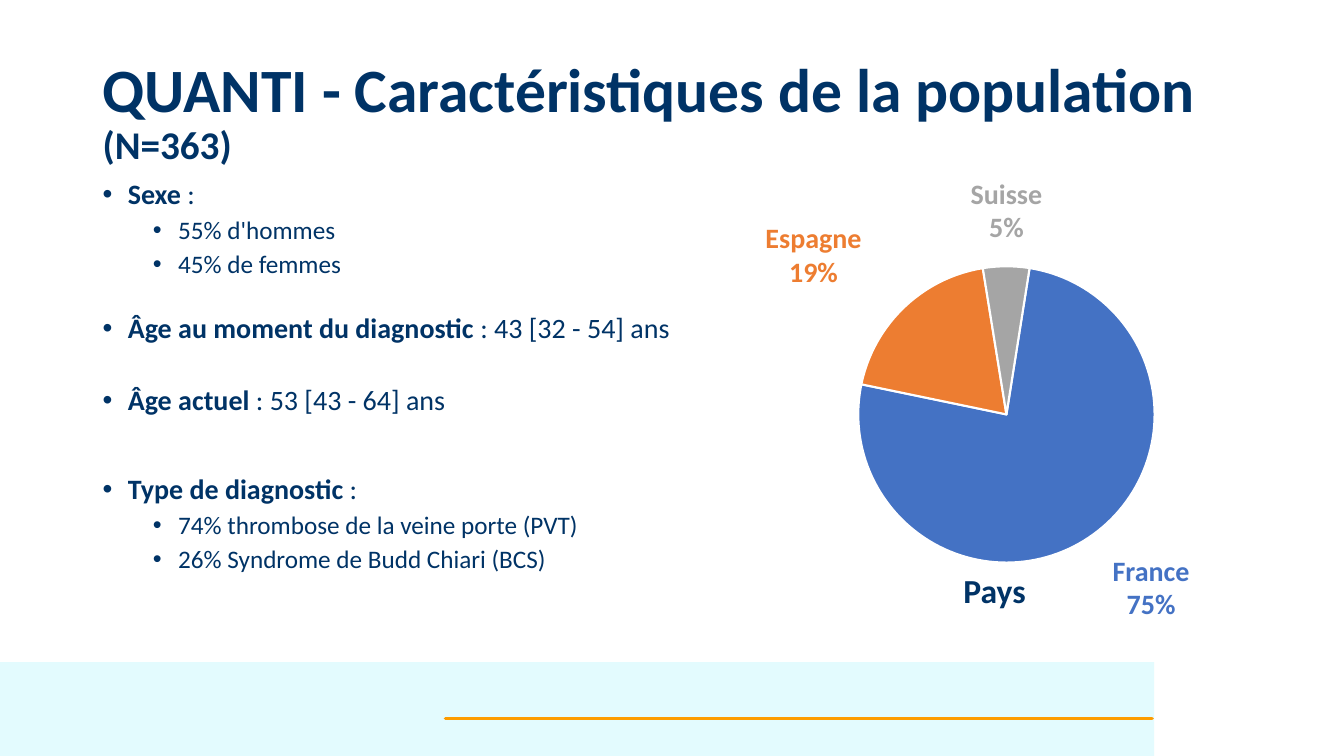
from lxml.etree import SubElement, fromstring
from pptx import Presentation
from pptx.chart.data import CategoryChartData
from pptx.dml.color import RGBColor
from pptx.enum.chart import XL_CHART_TYPE
from pptx.enum.shapes import MSO_CONNECTOR, MSO_SHAPE
from pptx.enum.text import MSO_ANCHOR, PP_ALIGN
from pptx.oxml.ns import nsdecls, qn
from pptx.util import Pt

NAVY = "003366"
BLUE, ORANGE, GREY = "4472C4", "ED7D31", "A5A5A5"

# level, space before, bold part, plain part
FACTS = [
    (0, 0, "Sexe ", ":"),
    (1, 5, "", "55% d'hommes"),
    (1, 5, "", "45% de femmes"),
    (0, 25, "Âge au moment du diagnostic ", ": 43 [32 - 54] ans"),
    (0, 30, "Âge actuel ", ": 53 [43 - 64] ans"),
    (0, 42, "Type de diagnostic ", ":"),
    (1, 5, "", "74% thrombose de la veine porte (PVT)"),
    (1, 5, "", "26% Syndrome de Budd Chiari (BCS)"),
]

# country, share, colour, label box
SHARES = [
    ("France", 75, BLUE, (784.8, 391.7, 74.9, 55.4)),
    ("Espagne", 19, ORANGE, (538.6, 154.1, 85, 55.4)),
    ("Suisse", 5, GREY, (661.7, 122.4, 114.5, 55.4)),
]


def color(code):
    return RGBColor.from_string(code)


def style(font, size, code, bold=True):
    font.name = "Calibri"
    font.size = Pt(size)
    font.bold = bold
    font.color.rgb = color(code)


def add_box(slide, box):
    frame = slide.shapes.add_textbox(*map(Pt, box)).text_frame
    frame.word_wrap = True
    return frame


def add_run(para, text, size, bold=True):
    run = para.add_run()
    run.text = text
    style(run.font, size, NAVY, bold)


def add_footer(slide):
    band = slide.shapes.add_shape(MSO_SHAPE.RECTANGLE, 0, Pt(473), Pt(824.4), Pt(67))
    band.shadow.inherit = False
    band.fill.solid()
    band.fill.fore_color.rgb = color("E3FBFE")
    band.line.fill.background()
    rule = slide.shapes.add_connector(
        MSO_CONNECTOR.STRAIGHT, Pt(318.2), Pt(513.4), Pt(823), Pt(513.4))
    rule.line.color.rgb = color("FD9C00")
    rule.line.width = Pt(2.5)
    rule.line._get_or_add_ln().set("cap", "rnd")
    SubElement(rule._element.spPr, qn("a:effectLst"))


def add_title(slide):
    frame = add_box(slide, (66.2, 28.8, 874.8, 104.4))
    frame.vertical_anchor = MSO_ANCHOR.MIDDLE
    para = frame.paragraphs[0]
    para.line_spacing = 0.9
    add_run(para, "QUANTI - Caractéristiques de la population ", 44)
    add_run(para, "(N=363)", 28)


def add_facts(slide):
    frame = add_box(slide, (66.2, 125.3, 848.9, 342.7))
    for i, (level, gap, lead, rest) in enumerate(FACTS):
        para = frame.add_paragraph() if i else frame.paragraphs[0]
        para.level = level
        para.line_spacing = 0.9
        para.space_before = Pt(gap)
        props = para._p.get_or_add_pPr()
        props.set("marL", str(Pt(18 + 36 * level)))
        props.set("indent", str(Pt(-18)))
        SubElement(props, qn("a:buFont"), typeface="Arial")
        SubElement(props, qn("a:buChar"), char="•")
        size = 20 - 2 * level
        if lead:
            add_run(para, lead, size)
        add_run(para, rest, size, False)


def add_label(slide, text, box, size, code, align):
    frame = add_box(slide, box)
    frame.text = text
    for para in frame.paragraphs:
        para.alignment = align
        style(para.runs[0].font, size, code)


def set_plot(chart, x, y, w, h):
    """Place the plot area by fractions of the chart frame."""
    area = chart._chartSpace.chart.plotArea
    for old in area.findall(qn("c:layout")):
        area.remove(old)
    sizes = "".join(f'<c:{k} val="{v}"/>' for k, v in zip("xywh", (x, y, w, h)))
    area.insert(0, fromstring(
        f'<c:layout {nsdecls("c")}><c:manualLayout><c:layoutTarget val="inner"/>'
        f'<c:xMode val="edge"/><c:yMode val="edge"/>{sizes}'
        '</c:manualLayout></c:layout>'))


def add_pie(slide):
    data = CategoryChartData()
    data.categories = [name for name, *_ in SHARES]
    data.add_series("Pays", [share for _, share, *_ in SHARES])
    chart = slide.shapes.add_chart(
        XL_CHART_TYPE.PIE, Pt(522.7), Pt(178.6), Pt(392.4), Pt(232.6), data).chart
    chart.has_legend = False
    chart.has_title = False
    style(chart.font, 10, "000000", False)
    plot = chart.plots[0]
    plot.vary_by_categories = False
    for i, (_, _, code, _) in enumerate(SHARES):
        form = plot.series[0].points[i].format
        form.fill.solid()
        form.fill.fore_color.rgb = color(code)
        form.line.color.rgb = color("FFFFFF")
        form.line.width = Pt(1.5)
    pie = plot._element
    for old in pie.findall(qn("c:firstSliceAng")):
        pie.remove(old)
    SubElement(pie, qn("c:firstSliceAng"), val="9")
    set_plot(chart, 0.23, 0.05, 0.54, 0.91)


def main():
    deck = Presentation()
    deck.slide_width, deck.slide_height = Pt(960), Pt(540)
    slide = deck.slides.add_slide(deck.slide_layouts[6])
    add_footer(slide)
    add_title(slide)
    add_facts(slide)
    for name, share, code, box in SHARES:
        add_label(slide, f"{name}\n{share}%", box, 20, code, PP_ALIGN.CENTER)
    add_label(slide, "Pays", (681.1, 403.2, 95.8, 36), 24, NAVY, PP_ALIGN.LEFT)
    add_pie(slide)
    deck.save("out.pptx")


if __name__ == "__main__":
    main()
